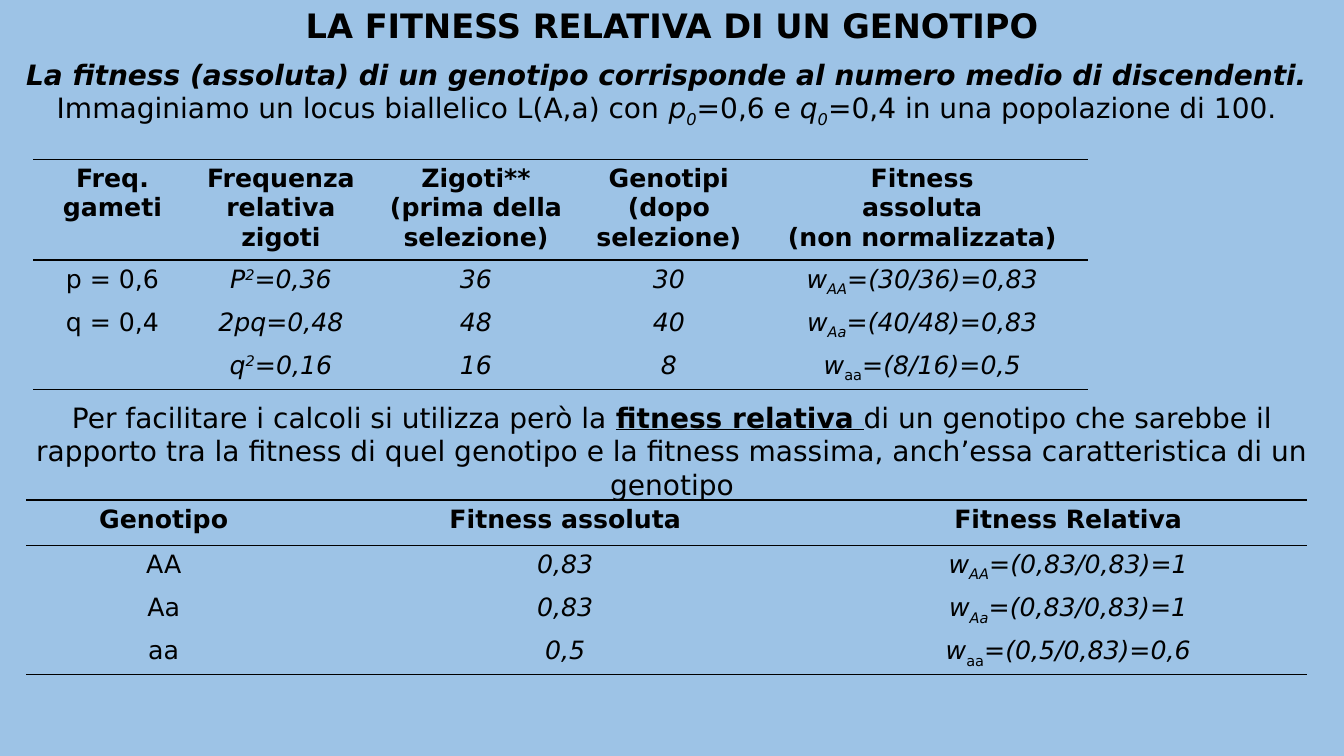
from lxml import etree
from pptx import Presentation
from pptx.dml.color import RGBColor
from pptx.enum.text import MSO_AUTO_SIZE, PP_ALIGN
from pptx.oxml.ns import qn
from pptx.util import Cm, Pt

CENTER = PP_ALIGN.CENTER
GROW = MSO_AUTO_SIZE.SHAPE_TO_FIT_TEXT
COLORS = {"background": "9DC3E6", "ink": "000000"}
FONT = "DejaVu Sans"
NO_STYLE_NO_GRID = "{2D5ABB26-0587-4C30-8999-92F81FD0307C}"
RULE_WIDTH = Pt(1)
SUBSCRIPT, SUPERSCRIPT = "-25000", "30000"

# Run formats
PLAIN = {}
BOLD = {"bold": True}
ITALIC = {"italic": True}
BOLD_ITALIC = {"bold": True, "italic": True}
KEY_TERM = {"bold": True, "underline": True}
SUB = {"baseline": SUBSCRIPT}
ITALIC_SUB = {"italic": True, "baseline": SUBSCRIPT}
ITALIC_SUP = {"italic": True, "baseline": SUPERSCRIPT}


def fitness(genotype, value, sub=ITALIC_SUB):
    return [("w", ITALIC), (genotype, sub), ("=" + value, ITALIC)]


def square(allele, value):
    return [(allele, ITALIC), ("2", ITALIC_SUP), ("=" + value, ITALIC)]


# Content: a text is a list of paragraphs, a paragraph is a list of (text, format)
TITLE = [[("LA FITNESS RELATIVA DI UN GENOTIPO", BOLD)]]
DEFINITION = [
    [("La fitness (assoluta) di un genotipo corrisponde al numero medio di discendenti.",
      BOLD_ITALIC)],
    [("Immaginiamo un locus biallelico L(A,a) con ", PLAIN),
     ("p", ITALIC), ("0", ITALIC_SUB), ("=0,6 e ", PLAIN),
     ("q", ITALIC), ("0", ITALIC_SUB), ("=0,4 in una popolazione di 100.", PLAIN)],
]
RELATIVE = [[
    ("Per facilitare i calcoli si utilizza però la ", PLAIN),
    ("fitness relativa ", KEY_TERM),
    ("di un genotipo che sarebbe il rapporto tra la fitness di quel genotipo e la "
     "fitness massima, anch’essa caratteristica di un genotipo", PLAIN),
]]

# (left, top, width, height) in cm, size in pt, text
TEXTS = [
    ((-0.13, 1.32, 33.87, 1.96), 20, DEFINITION),
    ((0, 9.96, 33.87, 2.82), 20, RELATIVE),
    ((0, 0, 33.87, 1.27), 24, TITLE),
]

# Plain strings in the first column are upright, in the others italic
TABLES = [
    {
        "at": (0.84, 4.01), "columns": (3.99, 4.5, 5.33, 4.39, 8.38), "header_height": 2.54,
        "header": [["Freq.", "gameti"], ["Frequenza", "relativa", "zigoti"],
                   ["Zigoti**", "(prima della selezione)"],
                   ["Genotipi", "(dopo selezione)"],
                   ["Fitness", "assoluta", "(non normalizzata)"]],
        "rows": [
            ["p = 0,6", square("P", "0,36"), "36", "30", fitness("AA", "(30/36)=0,83")],
            ["q = 0,4", "2pq=0,48", "48", "40", fitness("Aa", "(40/48)=0,83")],
            ["", square("q", "0,16"), "16", "8", fitness("aa", "(8/16)=0,5", SUB)],
        ],
    },
    {
        "at": (0.66, 12.6), "columns": (6.93, 13.31, 12.04), "header_height": 1.14,
        "header": [["Genotipo"], ["Fitness assoluta"], ["Fitness Relativa"]],
        "rows": [
            ["AA", "0,83", fitness("AA", "(0,83/0,83)=1")],
            ["Aa", "0,83", fitness("Aa", "(0,83/0,83)=1")],
            ["aa", "0,5", fitness("aa", "(0,5/0,83)=0,6", SUB)],
        ],
    },
]
ROW_HEIGHT = 1.07
TABLE_SIZE = 18


def write(frame, paragraphs, size):
    for i, runs in enumerate(paragraphs):
        paragraph = frame.paragraphs[0] if i == 0 else frame.add_paragraph()
        paragraph.alignment = CENTER
        paragraph.font.size = Pt(size)
        for text, style in runs:
            run = paragraph.add_run()
            run.text = text
            run.font.color.rgb = RGBColor.from_string(COLORS["ink"])
            formats = {"name": FONT, "size": Pt(size), **style}
            baseline = formats.pop("baseline", None)
            for attribute, value in formats.items():
                setattr(run.font, attribute, value)
            if baseline:
                run.font._element.set("baseline", baseline)


def add_rule(cell, side):
    line = etree.SubElement(cell._tc.get_or_add_tcPr(), qn("a:" + side), w=str(RULE_WIDTH))
    fill = etree.SubElement(line, qn("a:solidFill"))
    etree.SubElement(fill, qn("a:srgbClr"), val=COLORS["ink"])


def cell_paragraphs(content, row, column):
    if row == 0:
        return [[(line, BOLD)] for line in content]
    if isinstance(content, str):
        return [[(content, ITALIC if column else PLAIN)]] if content else []
    return [content]


def add_fitness_table(slide, data):
    grid = [data["header"], *data["rows"]]
    heights = [data["header_height"]] + [ROW_HEIGHT] * len(data["rows"])
    left, top = data["at"]
    table = slide.shapes.add_table(
        len(grid), len(data["columns"]), Cm(left), Cm(top),
        Cm(sum(data["columns"])), Cm(sum(heights))).table
    table._tbl.tblPr.find(qn("a:tableStyleId")).text = NO_STYLE_NO_GRID
    table.first_row = table.horz_banding = False
    for column, width in zip(table.columns, data["columns"]):
        column.width = Cm(width)
    for r, contents in enumerate(grid):
        table.rows[r].height = Cm(heights[r])
        for c, content in enumerate(contents):
            cell = table.cell(r, c)
            write(cell.text_frame, cell_paragraphs(content, r, c), TABLE_SIZE)
            # Rules above and below the header, and below the last row
            if r == 0:
                add_rule(cell, "lnT")
            if r in (0, len(grid) - 1):
                add_rule(cell, "lnB")
            cell.fill.background()


def main():
    prs = Presentation()
    prs.slide_width, prs.slide_height = Cm(33.87), Cm(19.05)
    slide = prs.slides.add_slide(prs.slide_layouts[6])
    background = slide.background.fill
    background.solid()
    background.fore_color.rgb = RGBColor.from_string(COLORS["background"])

    # Tables
    for data in TABLES:
        add_fitness_table(slide, data)

    # Title and explanations
    for box, size, paragraphs in TEXTS:
        frame = slide.shapes.add_textbox(*map(Cm, box)).text_frame
        frame.word_wrap = True
        frame.auto_size = GROW
        write(frame, paragraphs, size)

    prs.save("out.pptx")


if __name__ == "__main__":
    main()
